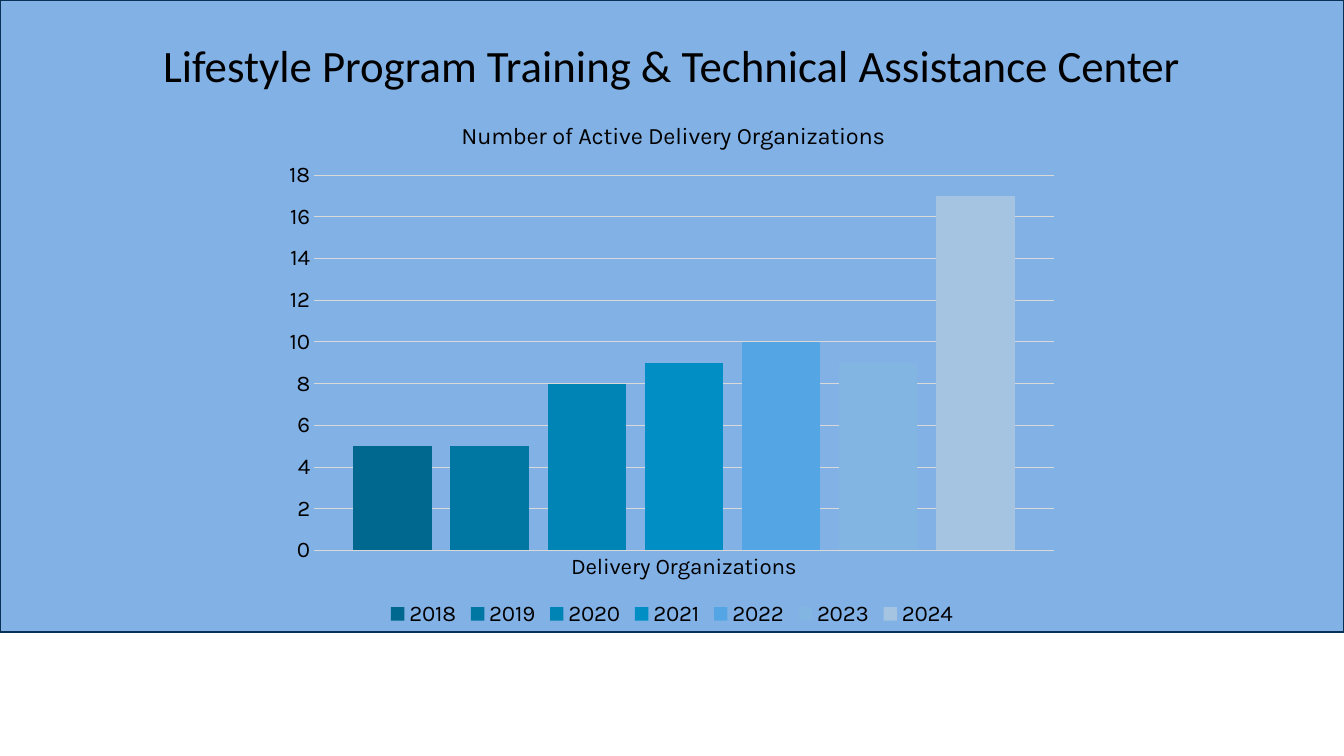
from lxml.etree import SubElement
from pptx import Presentation
from pptx.chart.data import CategoryChartData
from pptx.dml.color import RGBColor
from pptx.enum.chart import XL_CHART_TYPE, XL_LEGEND_POSITION, XL_TICK_MARK
from pptx.enum.shapes import MSO_SHAPE
from pptx.enum.text import MSO_ANCHOR, PP_ALIGN
from pptx.oxml.ns import qn
from pptx.util import Inches, Pt

BLACK = RGBColor(0x00, 0x00, 0x00)
SKY = RGBColor(0x82, 0xB1, 0xE5)
NAVY = RGBColor(0x07, 0x31, 0x57)
GRID = RGBColor(0xD9, 0xD9, 0xD9)
YEARS = [
    ("2018", 5, RGBColor(0x00, 0x67, 0x8E)),
    ("2019", 5, RGBColor(0x00, 0x76, 0xA3)),
    ("2020", 8, RGBColor(0x00, 0x83, 0xB5)),
    ("2021", 9, RGBColor(0x00, 0x8E, 0xC5)),
    ("2022", 10, RGBColor(0x53, 0xA6, 0xE3)),
    ("2023", 9, RGBColor(0x83, 0xB5, 0xE2)),
    ("2024", 17, RGBColor(0xA4, 0xC4, 0xE2)),
]


def style_font(font, size, name="Karla"):
    font.size = Pt(size)
    font.name = name
    font.bold = False
    font.color.rgb = BLACK


def place(layout, **settings):
    """Fix a chart part by shares of the chart's size."""
    for old in list(layout):
        layout.remove(old)
    manual = SubElement(layout, qn("c:manualLayout"))
    for tag, value in settings.items():
        SubElement(manual, qn(f"c:{tag}")).set("val", str(value))


prs = Presentation()
prs.slide_width, prs.slide_height = Inches(13.33), Inches(7.5)
W, H = prs.slide_width, prs.slide_height
s = prs.slides.add_slide(prs.slide_layouts[6])

# Blue panel
sp = s.shapes.add_shape(MSO_SHAPE.RECTANGLE, 0, 0, W, Inches(6.27))
sp.shadow.inherit = False
sp.fill.solid()
sp.fill.fore_color.rgb = SKY
sp.line.color.rgb = NAVY
sp.line.width = Pt(0.85)

# Heading
heading_w = Inches(11.5)
sp = s.shapes.add_textbox((W - heading_w) // 2, Inches(0.4), heading_w, Inches(0.54))
tf = sp.text_frame
tf.word_wrap = True
tf.vertical_anchor = MSO_ANCHOR.MIDDLE
p = tf.paragraphs[0]
p.alignment = PP_ALIGN.CENTER
p.line_spacing = 0.9
r = p.add_run()
r.text = "Lifestyle Program Training & Technical Assistance Center"
style_font(r.font, 32, "Calibri")

# Column chart, one series per year
data = CategoryChartData()
data.categories = ["Delivery Organizations"]
for year, count, _ in YEARS:
    data.add_series(year, [count])
chart_w = Inches(7.89)
chart = s.shapes.add_chart(XL_CHART_TYPE.COLUMN_CLUSTERED, (W - chart_w) // 2,
                           Inches(0.94), chart_w, Inches(5.32), data).chart
style_font(chart.font, 14)
plot = chart.plots[0]
plot.gap_width = 100
plot.overlap = -24
plot.vary_by_categories = False
for series, (_, _, color) in zip(plot.series, YEARS):
    series.format.fill.solid()
    series.format.fill.fore_color.rgb = color

# Chart title
chart.has_title = True
p = chart.chart_title.text_frame.paragraphs[0]
r = p.add_run()
r.text = "Number of Active Delivery Organizations"
style_font(r.font, 16.8)
chart.chart_title.include_in_layout = False

# Axes
for axis in (chart.category_axis, chart.value_axis):
    axis.major_tick_mark = axis.minor_tick_mark = XL_TICK_MARK.NONE
    style_font(axis.tick_labels.font, 16)
chart.category_axis.format.line.color.rgb = GRID
chart.category_axis.format.line.width = Pt(1)
axis = chart.value_axis
axis.minimum_scale, axis.maximum_scale, axis.major_unit = 0, 18, 2
axis.format.line.fill.background()
axis.major_gridlines.format.line.color.rgb = GRID
axis.major_gridlines.format.line.width = Pt(0.75)

# Legend
chart.has_legend = True
chart.legend.position = XL_LEGEND_POSITION.BOTTOM
chart.legend.include_in_layout = False
style_font(chart.legend.font, 16)

# Positions of the title and the plot inside the chart
title = chart.chart_title._element
place(title.get_or_add_layout() if hasattr(title, "get_or_add_layout")
      else title.find(qn("c:layout")), xMode="edge", yMode="edge", x=0.23, y=0.04)
plot_area = chart._chartSpace.chart.plotArea
layout = plot_area.find(qn("c:layout"))
if layout is None:
    layout = SubElement(plot_area, qn("c:layout"))
    plot_area.insert(0, layout)
place(layout, layoutTarget="inner", xMode="edge", yMode="edge",
      x=0.05, y=0.15, w=0.93, h=0.7)

prs.save("out.pptx")
